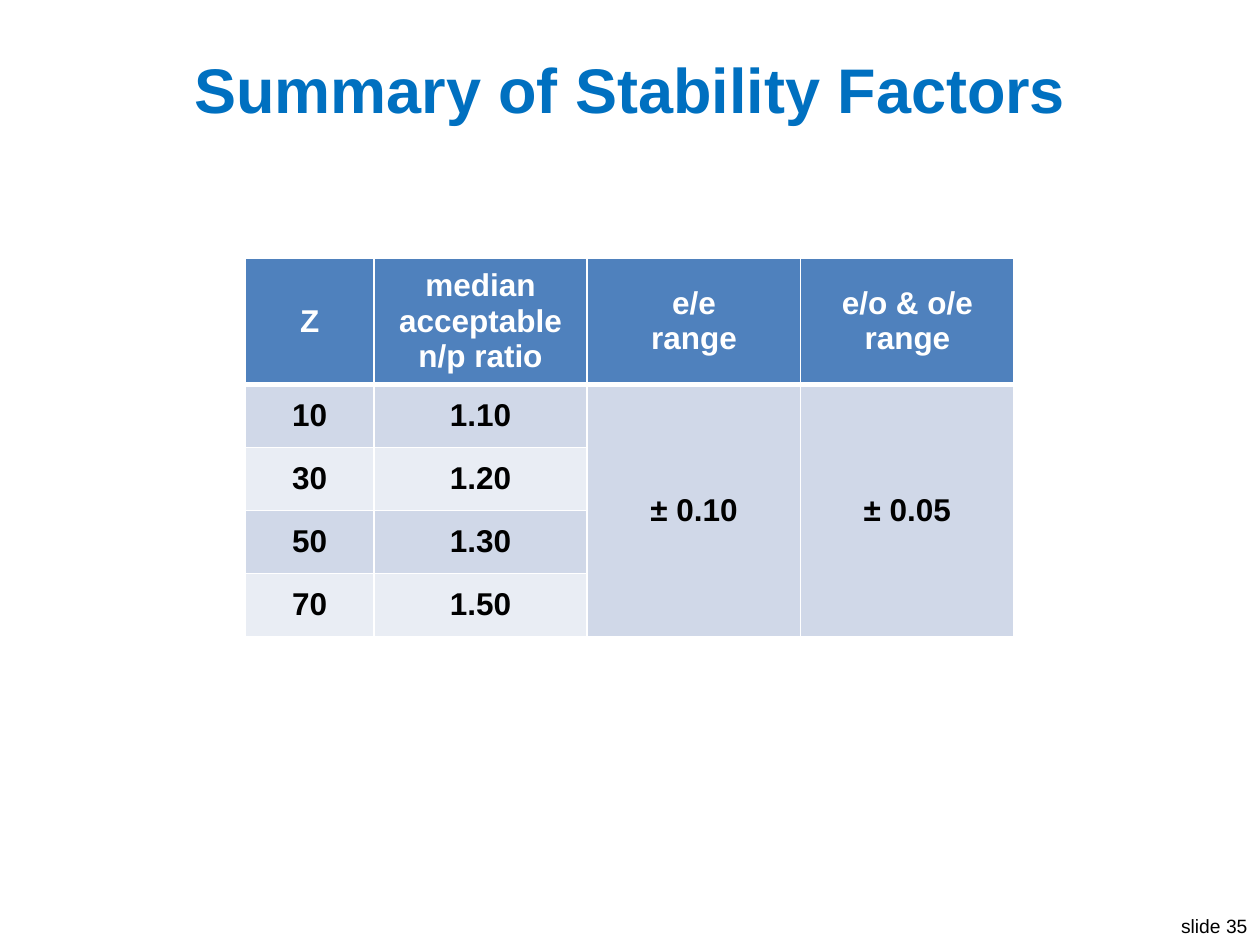
from lxml import etree
from pptx import Presentation
from pptx.dml.color import RGBColor
from pptx.enum.text import MSO_ANCHOR, PP_ALIGN
from pptx.oxml.ns import qn
from pptx.util import Pt

CENTER, RIGHT = PP_ALIGN.CENTER, PP_ALIGN.RIGHT
MIDDLE = MSO_ANCHOR.MIDDLE
WHITE, BLACK, BLUE = "FFFFFF", "000000", "4F81BD"
BANDS = ["D0D8E8", "E9EDF4"]


def write(tf, text, color, align=CENTER, **font):
    tf.text = text
    for p in tf.paragraphs:
        p.alignment = align
        for r in p.runs:
            r.font.color.rgb = RGBColor.from_string(color)
            for name, value in {"name": "Arial", **font}.items():
                setattr(r.font, name, value)


def style_cell(cell, fill, borders):
    cell.vertical_anchor = MIDDLE
    tcPr = cell._tc.get_or_add_tcPr()
    for side, width in borders.items():
        ln = etree.SubElement(tcPr, qn(f"a:{side}"), w=str(Pt(width)))
        solid = etree.SubElement(ln, qn("a:solidFill"))
        etree.SubElement(solid, qn("a:srgbClr"), val=WHITE)
    cell.fill.solid()
    cell.fill.fore_color.rgb = RGBColor.from_string(fill)


prs = Presentation()
prs.slide_width, prs.slide_height = Pt(720), Pt(540)
s = prs.slides.add_slide(prs.slide_layouts[5])

title = s.shapes.title
place = {"left": 49.5, "top": 21.6, "width": 621, "height": 57.6}
for name, value in place.items():
    setattr(title, name, Pt(value))
title.text_frame.vertical_anchor = MIDDLE
write(title.text_frame, "Summary of Stability Factors", "0070C0", size=Pt(36), bold=True)

rows = [
    ["Z", "median\nacceptable\nn/p ratio", "e/e\nrange", "e/o & o/e\nrange"],
    ["10", "1.10", "± 0.10", "± 0.05"],
    ["30", "1.20"],
    ["50", "1.30"],
    ["70", "1.50"],
]
widths = [73.2, 122, 122, 122]
heights = [72, 36, 36, 36, 36]
table = s.shapes.add_table(
    len(rows), len(widths), Pt(140.4), Pt(147.6), Pt(sum(widths)), Pt(sum(heights))
).table
for col, width in zip(table.columns, widths):
    col.width = Pt(width)
for row, height in zip(table.rows, heights):
    row.height = Pt(height)
for c in (2, 3):
    table.cell(1, c).merge(table.cell(4, c))

for i, row in enumerate(rows):
    header = i == 0
    borders = {"lnL": 1, "lnR": 1, "lnT": 3 if i == 1 else 1, "lnB": 3 if header else 1}
    for j in range(len(widths)):
        merged = i > 0 and j > 1
        fill = BLUE if header else BANDS[0 if merged else (i - 1) % 2]
        style_cell(table.cell(i, j), fill, borders)
    for j, text in enumerate(row):
        color = WHITE if header else BLACK
        write(table.cell(i, j).text_frame, text, color, size=Pt(18), bold=True)

tf = s.shapes.add_textbox(Pt(666), Pt(519.1), Pt(54), Pt(20.9)).text_frame
tf.word_wrap = False
write(tf, "slide 35", BLACK, RIGHT, size=Pt(11))

prs.save("out.pptx")
